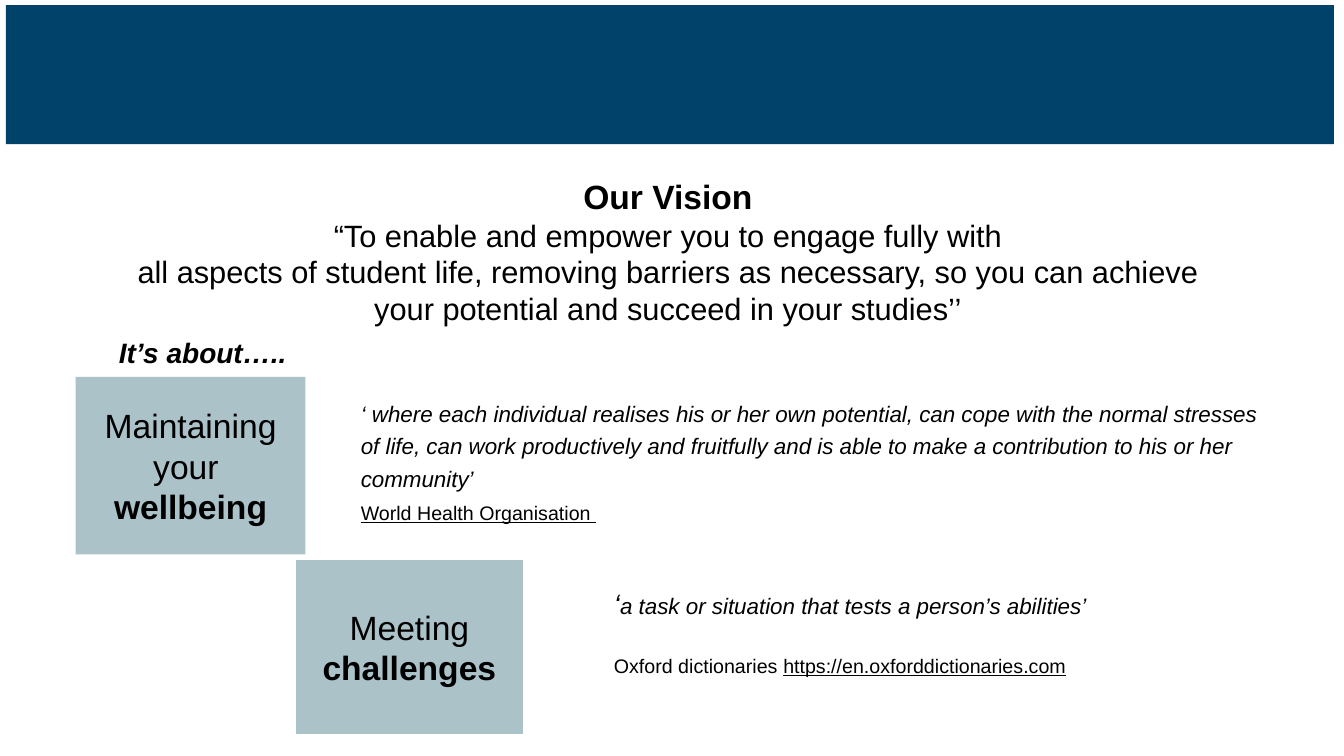
from dataclasses import dataclass
from typing import Optional

from pptx import Presentation
from pptx.dml.color import RGBColor
from pptx.enum.shapes import MSO_SHAPE
from pptx.enum.text import MSO_ANCHOR, PP_ALIGN
from pptx.util import Emu, Pt

RECTANGLE = MSO_SHAPE.RECTANGLE
MIDDLE, TOP = MSO_ANCHOR.MIDDLE, MSO_ANCHOR.TOP
CENTER, LEFT = PP_ALIGN.CENTER, PP_ALIGN.LEFT

NAVY = RGBColor(0x00, 0x42, 0x69)
TEAL = RGBColor(0xAC, 0xC2, 0xC9)
WHITE = RGBColor(0xFF, 0xFF, 0xFF)
BLACK = RGBColor(0x00, 0x00, 0x00)
FONT = "Arial"
EMU_PER_PX = 9144


@dataclass(frozen=True)
class Span:
    text: str
    size: int
    bold: bool = False
    italic: bool = False
    underline: bool = False


@dataclass(frozen=True)
class Para:
    spans: tuple[Span, ...]
    space_before: float = 0
    line_spacing: float = 1.0


@dataclass(frozen=True)
class Block:
    """A rectangle when it has a fill, otherwise a plain text box."""
    left: int
    top: int
    width: int
    height: int
    paras: tuple[Para, ...] = ()
    fill: Optional[RGBColor] = None
    outline: Optional[RGBColor] = None
    wrap: bool = True


BANNER = Block(6, 5, 1317, 138, fill=NAVY)
VISION = Block(124, 149, 1077, 201, (
    Para((Span("Our Vision", 24, bold=True),)),
    Para((Span("“To enable and empower you to engage fully with", 22),)),
    Para((Span("all aspects of student life, removing barriers as necessary, "
               "so you can achieve your potential and succeed in your studies’’", 22),)),
), fill=WHITE)
WELLBEING = Block(75, 374, 228, 176, (
    Para((Span("Maintaining", 24),)),
    Para((Span("your ", 24),)),
    Para((Span("wellbeing", 24, bold=True),)),
), fill=TEAL)
CHALLENGES = Block(292, 554, 228, 176, (
    Para((Span("Meeting ", 24), Span("challenges", 24, bold=True))),
), fill=TEAL, outline=WHITE)
CHALLENGE_MEANING = Block(599, 577, 529, 101, (
    Para((Span("‘", 20, italic=True),
          Span("a task or situation that tests a person’s abilities’", 16, italic=True))),
    Para((Span("Oxford dictionaries ", 14),
          Span("https://en.oxforddictionaries.com", 14, underline=True)), space_before=24),
))
ABOUT = Block(108, 328, 187, 44, (
    Para((Span("It’s about…..", 20, bold=True, italic=True),)),
), wrap=False)
WELLBEING_MEANING = Block(348, 387, 926, 176, (
    Para((Span("‘ where each individual realises his or her own potential, can cope with "
               "the normal stresses of life, can work productively and fruitfully and is "
               "able to make a contribution to his or her community’", 16, italic=True),),
         line_spacing=1.2),
    Para((Span("World Health Organisation ", 14, underline=True),),
         space_before=3, line_spacing=1.2),
))
BLOCKS = (BANNER, VISION, WELLBEING, CHALLENGES, CHALLENGE_MEANING, ABOUT, WELLBEING_MEANING)


def px(length: int) -> Emu:
    return Emu(length * EMU_PER_PX)


def write_para(paragraph, para: Para, align: PP_ALIGN) -> None:
    paragraph.alignment = align
    paragraph.line_spacing = para.line_spacing
    paragraph.space_before = Pt(para.space_before)
    for span in para.spans:
        run = paragraph.add_run()
        run.text = span.text
        font = run.font
        font.name, font.size = FONT, Pt(span.size)
        font.bold, font.italic, font.underline = span.bold, span.italic, span.underline
        font.color.rgb = BLACK


def draw_block(page, block: Block) -> None:
    frame = [px(side) for side in (block.left, block.top, block.width, block.height)]
    if block.fill is None:
        box = page.shapes.add_textbox(*frame)
        align, anchor = LEFT, TOP
    else:
        box = page.shapes.add_shape(RECTANGLE, *frame)
        align, anchor = CENTER, MIDDLE
        box.shadow.inherit = False
        box.fill.solid()
        box.fill.fore_color.rgb = block.fill
        if block.outline is None:
            box.line.fill.background()
        else:
            box.line.color.rgb = block.outline
            box.line.width = Pt(2)
    text_frame = box.text_frame
    text_frame.word_wrap = block.wrap
    text_frame.vertical_anchor = anchor
    for index, para in enumerate(block.paras):
        paragraph = text_frame.add_paragraph() if index else text_frame.paragraphs[0]
        write_para(paragraph, para, align)


def main() -> None:
    deck = Presentation()
    deck.slide_width, deck.slide_height = px(1333), px(750)
    page = deck.slides.add_slide(deck.slide_layouts[6])
    for block in BLOCKS:
        draw_block(page, block)
    deck.save("out.pptx")


if __name__ == "__main__":
    main()
